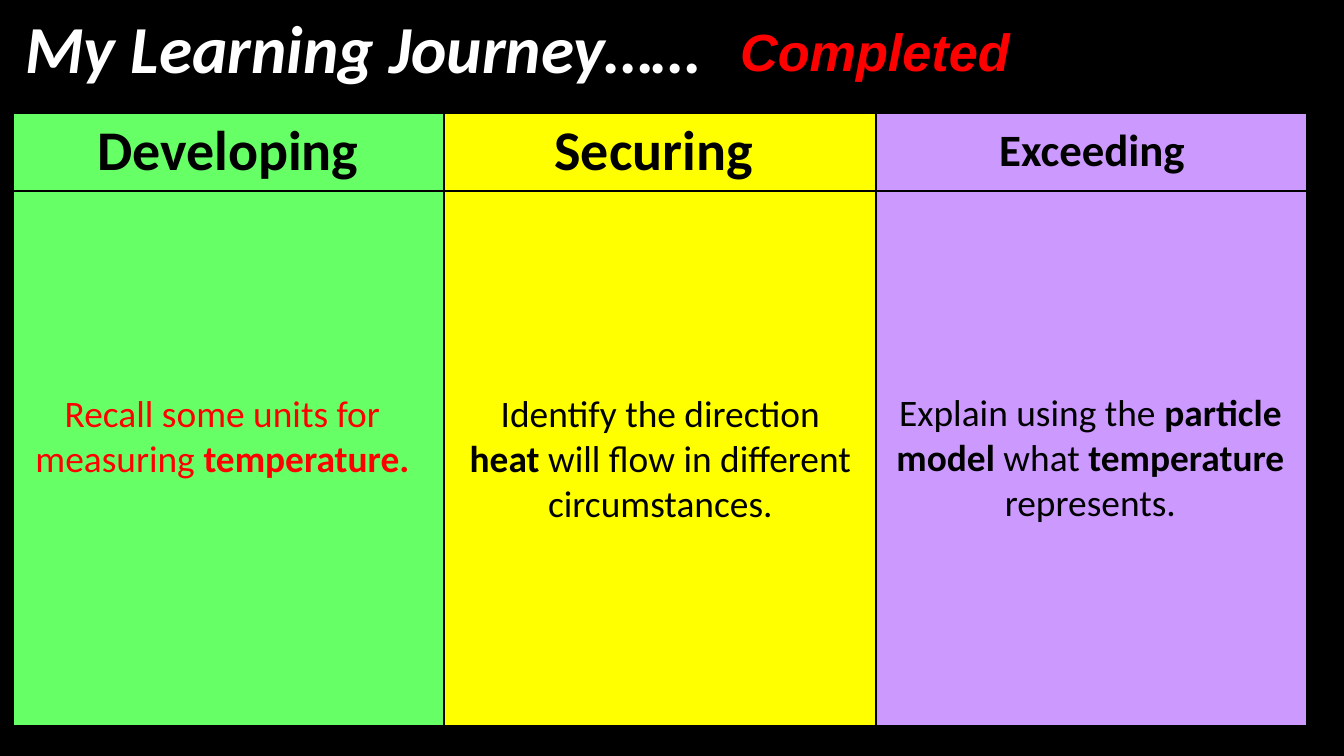
"""Build the learning journey slide: three attainment levels with their goals."""
from dataclasses import dataclass

from lxml import etree
from pptx import Presentation
from pptx.dml.color import RGBColor
from pptx.enum.text import MSO_ANCHOR, MSO_AUTO_SIZE, PP_ALIGN
from pptx.oxml.ns import qn
from pptx.util import Emu, Pt

CENTER, LEFT = PP_ALIGN.CENTER, PP_ALIGN.LEFT
MIDDLE = MSO_ANCHOR.MIDDLE
GROW = MSO_AUTO_SIZE.SHAPE_TO_FIT_TEXT
EMU_PER_PX = 914400 / 134.4
COLORS = {
    "black": "000000",
    "white": "FFFFFF",
    "red": "FF0000",
    "green": "66FF66",
    "yellow": "FFFF00",
    "purple": "CC99FF",
}
TABLE_LEFT, TABLE_TOP, COLUMN_WIDTH = 12, 112, 432
ROW_HEIGHTS = (79, 536)
OUTER_LINE, INNER_LINE = 2.25, 1


@dataclass(frozen=True)
class Style:
    size: int
    color: str
    font: str = "Calibri"
    bold: bool | None = None
    italic: bool | None = None


@dataclass(frozen=True)
class Caption:
    box: tuple[int, int, int, int]
    style: Style
    phrases: tuple[str, ...]
    align: PP_ALIGN = CENTER


@dataclass(frozen=True)
class Level:
    heading: str
    size: int
    fill: str


LEVELS = (
    Level("Developing", 30, "green"),
    Level("Securing ", 30, "yellow"),
    Level("Exceeding", 24, "purple"),
)
CAPTIONS = (
    Caption((12, 0, 965, 190), Style(36, "white", bold=True, italic=True),
            ("My Learning Journey……",), LEFT),
    Caption((12, 384, 421, 104), Style(20, "red"),
            ("Recall some units for measuring ", "temperature.")),
    Caption((727, 13, 367, 77), Style(28, "red", "Arial", True, True),
            ("Completed",), LEFT),
    Caption((450, 384, 421, 149), Style(20, "black"),
            ("Identify the direction ", "heat",
             " will flow in different circumstances.")),
    Caption((880, 383, 421, 149), Style(20, "black"),
            ("Explain using the ", "particle model", " what ",
             "temperature", " represents.")),
)


def px(length: int) -> Emu:
    """Turn pixels into EMU."""
    return Emu(round(length * EMU_PER_PX))


def rgb(name: str) -> RGBColor:
    """Look up a palette colour."""
    return RGBColor.from_string(COLORS[name])


def style_font(font, style: Style) -> None:
    """Apply a text style to a font."""
    font.name, font.size = style.font, Pt(style.size)
    font.bold, font.italic = style.bold, style.italic
    font.color.rgb = rgb(style.color)


def draw_caption(slide, caption: Caption) -> None:
    """Draw a text box whose every second phrase is bold."""
    frame = slide.shapes.add_textbox(*map(px, caption.box)).text_frame
    frame.word_wrap = True
    frame.auto_size = GROW
    paragraph = frame.paragraphs[0]
    paragraph.alignment = caption.align
    style_font(paragraph.font, caption.style)
    for index, phrase in enumerate(caption.phrases):
        run = paragraph.add_run()
        run.text = phrase
        if index % 2:
            run.font.bold = True


def set_borders(cell, widths: dict[str, float]) -> None:
    """Give a cell black borders, placed ahead of its fill."""
    properties = cell._tc.get_or_add_tcPr()
    for position, (side, width) in enumerate(widths.items()):
        line = etree.Element(qn(f"a:ln{side}"), w=str(int(Pt(width))))
        fill = etree.SubElement(line, qn("a:solidFill"))
        etree.SubElement(fill, qn("a:srgbClr"), val=COLORS["black"])
        properties.insert(position, line)


def draw_levels(slide, levels: tuple[Level, ...]) -> None:
    """Draw the table with one coloured column per level."""
    rows, columns = len(ROW_HEIGHTS), len(levels)
    table = slide.shapes.add_table(
        rows, columns, px(TABLE_LEFT), px(TABLE_TOP),
        px(COLUMN_WIDTH * columns), px(sum(ROW_HEIGHTS))).table
    table.first_row = table.horz_banding = False
    for row, height in zip(table.rows, ROW_HEIGHTS):
        row.height = px(height)
    for column, level in enumerate(levels):
        table.columns[column].width = px(COLUMN_WIDTH)
        for row in range(rows):
            cell = table.cell(row, column)
            cell.fill.solid()
            cell.fill.fore_color.rgb = rgb(level.fill)
            at_edge = {"L": column == 0, "R": column == columns - 1,
                       "T": row == 0, "B": row == rows - 1}
            set_borders(cell, {side: OUTER_LINE if edge else INNER_LINE
                               for side, edge in at_edge.items()})
        heading = table.cell(0, column)
        heading.text = level.heading
        heading.vertical_anchor = MIDDLE
        heading.margin_left = heading.margin_right = px(10)
        heading.margin_top = heading.margin_bottom = px(5)
        paragraph = heading.text_frame.paragraphs[0]
        paragraph.alignment = CENTER
        style_font(paragraph.font, Style(level.size, "black", bold=True))


def main() -> None:
    """Build and save the slide."""
    presentation = Presentation()
    presentation.slide_width, presentation.slide_height = px(1344), px(756)
    slide = presentation.slides.add_slide(presentation.slide_layouts[6])
    slide.background.fill.solid()
    slide.background.fill.fore_color.rgb = rgb("black")
    title, *others = CAPTIONS
    draw_caption(slide, title)
    draw_levels(slide, LEVELS)
    for caption in others:
        draw_caption(slide, caption)
    presentation.save("out.pptx")


if __name__ == "__main__":
    main()
